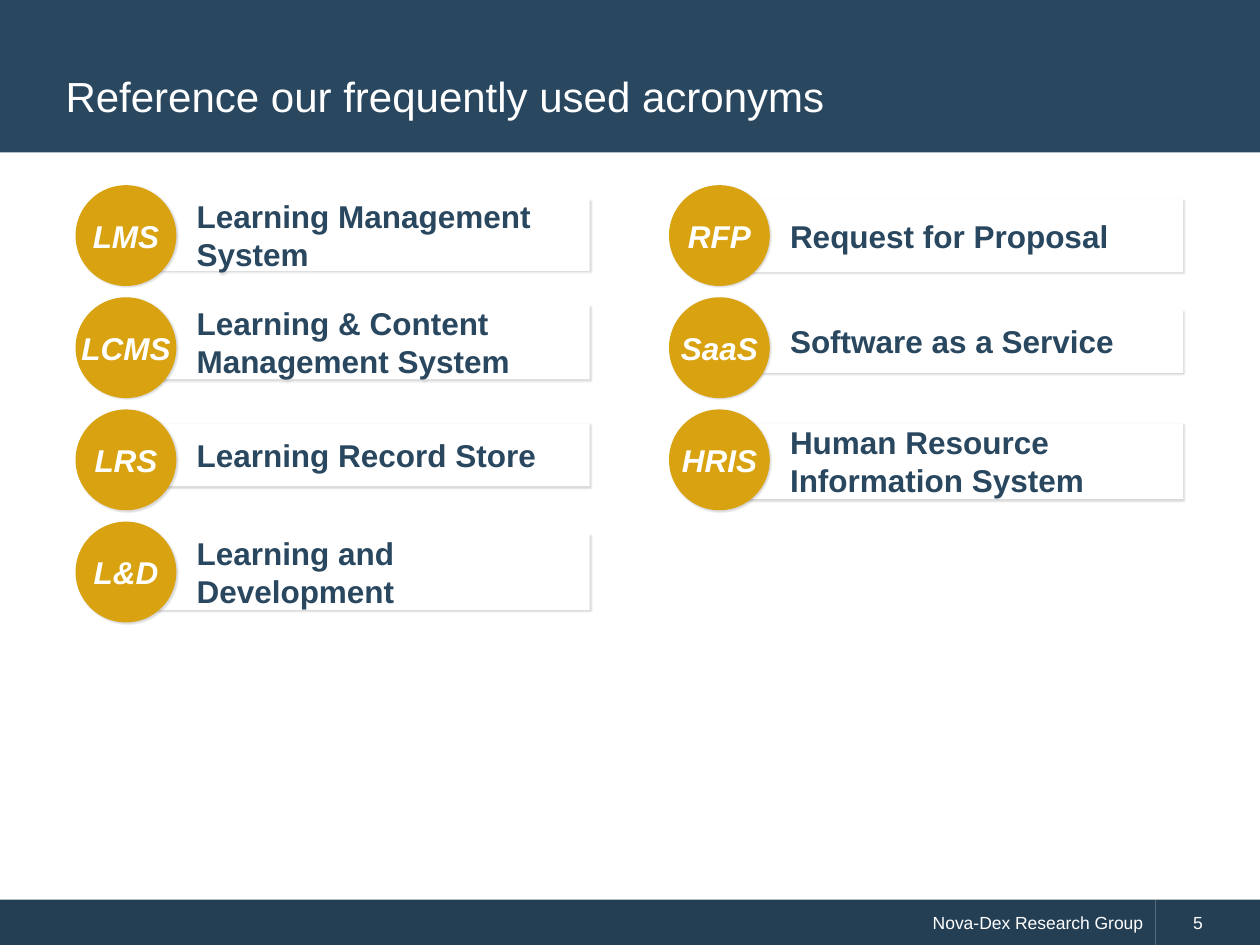
from lxml.etree import SubElement
from pptx import Presentation
from pptx.dml.color import RGBColor
from pptx.enum.shapes import MSO_SHAPE
from pptx.enum.text import MSO_ANCHOR, PP_ALIGN
from pptx.oxml.ns import qn
from pptx.util import Inches, Pt

TITLE = "Reference our frequently used acronyms"
FOOTER = "Nova-Dex Research Group"
PAGE_NUMBER = "5"
ACRONYM_COLUMNS = [
    [
        ("LMS", "Learning Management System", 0.11, 0.57),
        ("LCMS", "Learning & Content Management System", 0.06, 0.59),
        ("LRS", "Learning Record Store", 0.11, 0.5),
        ("L&D", "Learning and Development", 0.1, 0.6),
    ],
    [
        ("RFP", "Request for Proposal", 0.11, 0.58),
        ("SaaS", "Software as a Service", 0.1, 0.5),
        ("HRIS", "Human Resource Information System", 0.11, 0.6),
    ],
]
COLORS = {"navy": "29475F", "footer": "243F54", "gold": "D9A210",
          "white": "FFFFFF", "black": "000000"}
FONT = "Arial"
WIDTH, HEIGHT = 10, 7.5
GRID_LEFT, GRID_TOP = 0.6, 1.47
COLUMN_STEP, ROW_STEP = 4.71, 0.89
CIRCLE = 0.8
BAR_INDENT, BAR_WIDTH = 0.37, 3.71
LABEL_WIDTH, LABEL_HEIGHT = 0.92, 0.4
FOOTER_TOP, FOOTER_HEIGHT, FOOTER_SPLIT = 7.14, 0.37, 9.17


def color(name):
    return RGBColor.from_string(COLORS[name])


def add_block(page, kind, left, top, width, height, fill):
    block = page.shapes.add_shape(kind, *map(Inches, (left, top, width, height)))
    block.shadow.inherit = False
    block.fill.solid()
    block.fill.fore_color.rgb = color(fill)
    block.line.fill.background()
    return block


def add_soft_shadow(block):
    effects = block._element.spPr.find(qn("a:effectLst"))
    shadow = SubElement(effects, qn("a:outerShdw"), blurRad=str(Pt(1)), dist=str(Pt(1)),
                        dir=str(45 * 60000), algn="tl", rotWithShape="0")
    shade = SubElement(shadow, qn("a:srgbClr"), val=COLORS["black"])
    SubElement(shade, qn("a:alpha"), val="15000")


def write(box, text, size, ink, align=PP_ALIGN.LEFT, bold=False, italic=False):
    box.text_frame.vertical_anchor = MSO_ANCHOR.MIDDLE
    para = box.text_frame.paragraphs[0]
    para.alignment = align
    span = para.add_run()
    span.text = text
    span.font.name = FONT
    span.font.size = Pt(size)
    span.font.bold = bold
    span.font.italic = italic
    span.font.color.rgb = color(ink)
    return para


def add_title(page):
    header = add_block(page, MSO_SHAPE.RECTANGLE, 0, 0, WIDTH, 1.21, "navy")
    title = page.shapes.title
    title._element.addprevious(header._element)
    title.left, title.top, title.width, title.height = map(Inches, (0.42, 0.31, 9.43, 0.94))
    para = write(title, TITLE, 24, "white")
    para.line_spacing = Pt(26)


def add_footer(page):
    name_bar = add_block(page, MSO_SHAPE.RECTANGLE, 0, FOOTER_TOP,
                         FOOTER_SPLIT, FOOTER_HEIGHT, "footer")
    write(name_bar, FOOTER, 10, "white", PP_ALIGN.RIGHT)
    number_bar = add_block(page, MSO_SHAPE.RECTANGLE, FOOTER_SPLIT, FOOTER_TOP,
                           WIDTH - FOOTER_SPLIT, FOOTER_HEIGHT, "footer")
    number_bar.text_frame.margin_left = Inches(0.3)
    write(number_bar, PAGE_NUMBER, 10, "white")


def add_acronym(page, left, top, acronym, meaning, bar_offset, bar_height):
    bar = add_block(page, MSO_SHAPE.RECTANGLE, left + BAR_INDENT, top + bar_offset,
                    BAR_WIDTH, bar_height, "white")
    add_soft_shadow(bar)
    bar.text_frame.margin_left = Inches(0.59)
    write(bar, meaning, 18, "navy", bold=True)
    circle = add_block(page, MSO_SHAPE.OVAL, left, top, CIRCLE, CIRCLE, "gold")
    add_soft_shadow(circle)
    label = page.shapes.add_textbox(
        Inches(left + (CIRCLE - LABEL_WIDTH) / 2), Inches(top + (CIRCLE - LABEL_HEIGHT) / 2),
        Inches(LABEL_WIDTH), Inches(LABEL_HEIGHT))
    label.text_frame.word_wrap = False
    write(label, acronym, 18, "white", PP_ALIGN.CENTER, bold=True, italic=True)


def main():
    deck = Presentation()
    deck.slide_width, deck.slide_height = Inches(WIDTH), Inches(HEIGHT)
    page = deck.slides.add_slide(deck.slide_layouts[5])
    add_title(page)
    add_footer(page)
    for column, entries in enumerate(ACRONYM_COLUMNS):
        for row, entry in enumerate(entries):
            add_acronym(page, GRID_LEFT + column * COLUMN_STEP,
                        GRID_TOP + row * ROW_STEP, *entry)
    deck.save("out.pptx")


if __name__ == "__main__":
    main()
